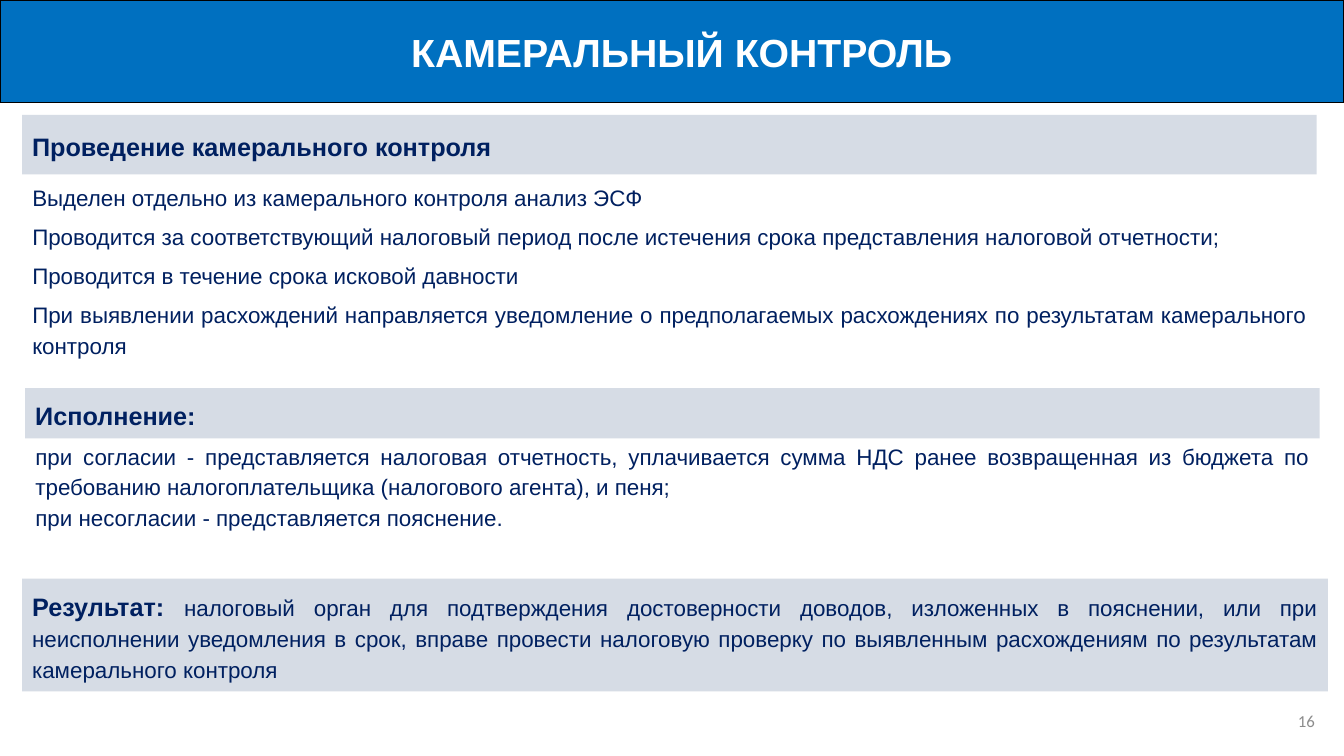
import pptx
import pptx.util
import pptx.dml.color
import pptx.enum.shapes
import pptx.enum.text
from dataclasses import dataclass

ALIGN = pptx.enum.text.PP_ALIGN
ANCHOR = pptx.enum.text.MSO_ANCHOR


@dataclass(frozen=True)
class Theme:
    font: str = "Arial"
    number_font: str = "Calibri"
    banner: str = "0070C0"
    outline: str = "000000"
    bar: str = "D6DCE5"
    ink: str = "002060"
    white: str = "FFFFFF"
    grey: str = "8C8C8C"
    title_size: int = 28
    heading_size: int = 18
    body_size: int = 16
    number_size: int = 12


class Deck:
    """Places elements on a grid of 100 columns by 75 rows."""
    COLS, ROWS = 100, 75

    def __init__(self, theme):
        self.t = theme
        self.prs = pptx.Presentation()
        self.prs.slide_width = pptx.util.Inches(13.33)
        self.prs.slide_height = pptx.util.Inches(7.5)
        self.s = self.prs.slides.add_slide(self.prs.slide_layouts[3])

    def box(self, col, row, cols, rows):
        w = self.prs.slide_width / self.COLS
        h = self.prs.slide_height / self.ROWS
        return [round(v) for v in (col * w, row * h, cols * w, rows * h)]

    def move(self, sp, cell):
        sp.left, sp.top, sp.width, sp.height = self.box(*cell)

    def frame(self, sp, anchor):
        tf = sp.text_frame
        tf.word_wrap = True
        tf.auto_size = pptx.enum.text.MSO_AUTO_SIZE.NONE
        tf.vertical_anchor = anchor
        return tf

    def color(self, value):
        return pptx.dml.color.RGBColor.from_string(value)

    def fill(self, sp, value):
        sp.fill.solid()
        sp.fill.fore_color.rgb = self.color(value)

    def style(self, r, size, color, bold=False, font=None):
        r.font.name = font or self.t.font
        r.font.size = pptx.util.Pt(size)
        r.font.bold = bold
        r.font.color.rgb = self.color(color)

    def spacing(self, p, line, before=0):
        p.alignment = ALIGN.JUSTIFY
        p.line_spacing = line
        p.space_before = pptx.util.Pt(before)

    def title(self, text, cell):
        sp = self.s.shapes.title
        self.move(sp, cell)
        self.fill(sp, self.t.banner)
        sp.line.color.rgb = self.color(self.t.outline)
        sp.line.width = pptx.util.Pt(1)
        p = self.frame(sp, ANCHOR.MIDDLE).paragraphs[0]
        p.text = text
        p.alignment = ALIGN.CENTER
        p._p.get_or_add_pPr().set("marL", str(pptx.util.Inches(0.19)))
        self.style(p.runs[0], self.t.title_size, self.t.white, True)

    def body(self, idx, items, cell, line, gap=0):
        sp = self.s.placeholders[idx]
        self.move(sp, cell)
        tf = self.frame(sp, ANCHOR.TOP)
        for i, item in enumerate(items):
            p = tf.paragraphs[0] if i == 0 else tf.add_paragraph()
            p.text = item
            self.spacing(p, line, gap if i else 0)
            pPr = p._p.get_or_add_pPr()
            pPr.set("marL", "0")
            pPr.set("indent", "0")
            pPr.append(pptx.oxml.parse_xml(
                '<a:buNone xmlns:a="http://schemas.openxmlformats.org/drawingml/2006/main"/>'))
            self.style(p.runs[0], self.t.body_size, self.t.ink)

    def bar(self, heading, cell, detail=None):
        sp = self.s.shapes.add_shape(
            pptx.enum.shapes.MSO_SHAPE.RECTANGLE, *self.box(*cell))
        sp.shadow.inherit = False
        self.fill(sp, self.t.bar)
        sp.line.fill.background()
        p = self.frame(sp, ANCHOR.MIDDLE).paragraphs[0]
        p.text = heading
        self.spacing(p, 1.14)
        self.style(p.runs[0], self.t.heading_size, self.t.ink, True)
        if detail:
            r = p.add_run()
            r.text = detail
            self.style(r, self.t.body_size, self.t.ink)

    def number(self, text, cell):
        sp = self.s.shapes.add_textbox(*self.box(*cell))
        p = self.frame(sp, ANCHOR.MIDDLE).paragraphs[0]
        p.text = text
        p.alignment = ALIGN.RIGHT
        self.style(p.runs[0], self.t.number_size, self.t.grey,
                   font=self.t.number_font)


def main():
    d = Deck(Theme())
    left, inset, width = 1.65, 1.88, 96.32

    # Banner
    d.title("КАМЕРАЛЬНЫЙ КОНТРОЛЬ", (0, 0, d.COLS, 10.2))

    # Conducting the control
    d.bar("Проведение камерального контроля", (left, 11.4, width, 5.9))
    d.body(1, [
        "Выделен отдельно из камерального контроля анализ ЭСФ",
        "Проводится за соответствующий налоговый период после истечения срока "
        "представления налоговой отчетности;",
        "Проводится в течение срока исковой давности",
        "При выявлении расхождений направляется уведомление о предполагаемых "
        "расхождениях по результатам камерального контроля",
    ], (left, 17.4, width, 22.8), line=1.14, gap=6)

    # Execution
    d.bar("Исполнение:", (inset, 38.5, width, 5))
    d.body(2, [
        "при согласии - представляется налоговая отчетность, уплачивается сумма "
        "НДС ранее возвращенная из бюджета по требованию налогоплательщика "
        "(налогового агента), и пеня;",
        "при несогласии - представляется пояснение.",
    ], (inset, 43.1, width, 9.9), line=1.13)

    # Result
    d.bar("Результат: ", (left, 57.4, 97.15, 11.2),
          "налоговый орган для подтверждения достоверности доводов, изложенных "
          "в пояснении, или при неисполнении уведомления в срок, вправе провести "
          "налоговую проверку по выявленным расхождениям по результатам "
          "камерального контроля")

    # Slide number
    d.number("16", (76.07, 69.5, 22.5, 4))

    d.prs.save("out.pptx")


if __name__ == "__main__":
    main()
